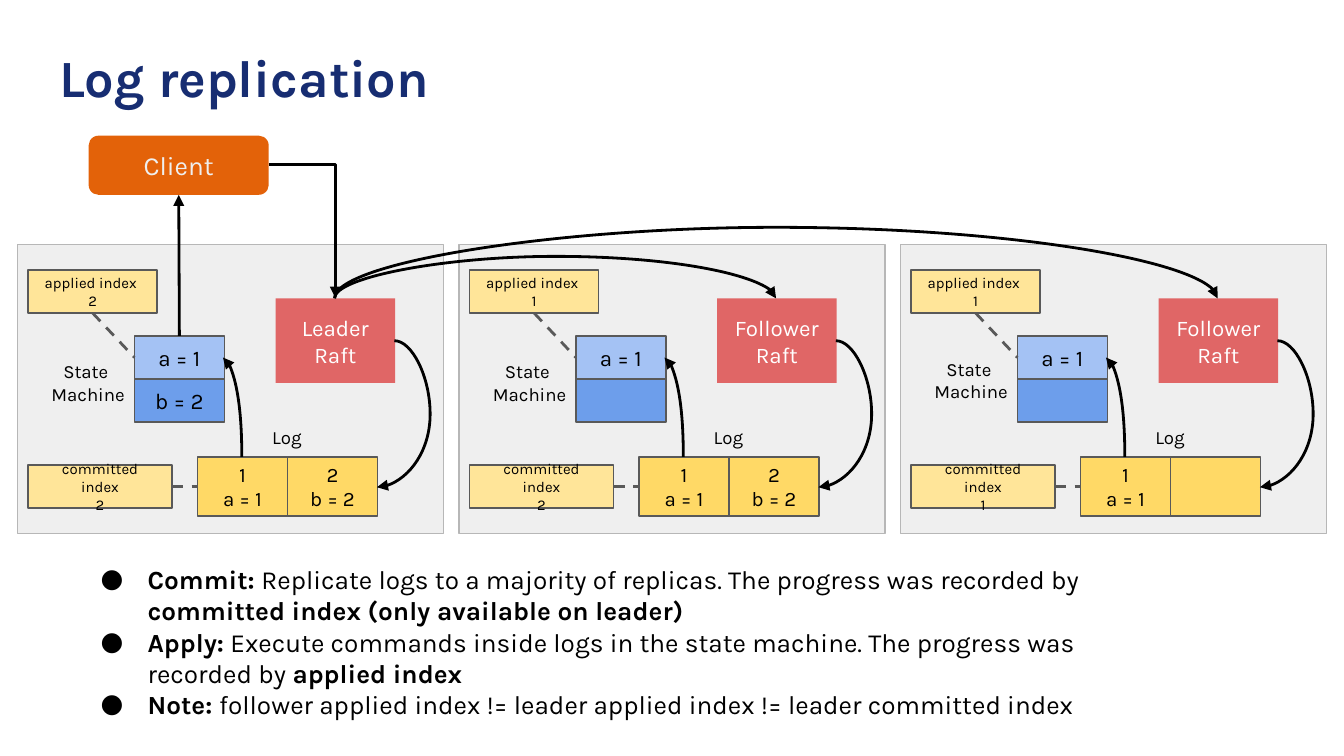
from lxml.etree import SubElement
from pptx import Presentation
from pptx.dml.color import RGBColor
from pptx.enum.dml import MSO_LINE
from pptx.enum.shapes import MSO_CONNECTOR as Link, MSO_SHAPE as Form
from pptx.enum.text import MSO_ANCHOR as Anchor, MSO_AUTO_SIZE as Fit, PP_ALIGN as Align
from pptx.oxml.ns import qn
from pptx.util import Emu, Inches, Pt

# Content
TITLE = "Log replication"
PANELS = [
    {"role": "Leader", "applied": 2, "committed": 2, "label": 2.58,
     "state": ["a = 1", "b = 2"], "log": ["1\na = 1", "2\nb = 2"]},
    {"role": "Follower", "applied": 1, "committed": 2, "label": 2.58,
     "state": ["a = 1", ""], "log": ["1\na = 1", "2\nb = 2"]},
    {"role": "Follower", "applied": 1, "committed": 1, "label": 2.56,
     "state": ["a = 1", ""], "log": ["1\na = 1", ""]},
]
# Each bullet is a list of (text, bold)
BULLETS = [
    [("Commit: ", True),
     ("Replicate logs to a majority of replicas. The progress was recorded by ", False),
     ("committed index (only available on leader)", True)],
    [("Apply:", True),
     (" Execute commands inside logs in the state machine. "
      "The progress was recorded by ", False),
     ("applied index", True)],
    [("Note: ", True),
     ("follower applied index != leader applied index != leader committed index", False)],
]
FONT = "Karla"
BLACK, GREY, WHITE = "000000", "595959", "FFFFFF"
PALE, GOLD, RED = "FFE599", "FFD966", "E06666"
BLUES = ["A4C2F4", "6D9EEB"]
LEFT, STEP = 0.13, 6.57 / 2

# A 16:9 slide
deck = Presentation()
deck.slide_width, deck.slide_height = Inches(10), Inches(10 * 9 / 16)
slide = deck.slides.add_slide(deck.slide_layouts[5])
shapes = slide.shapes


def color(code):
    return RGBColor.from_string(code)


def style(font, size, code, bold=False):
    font.name, font.size, font.bold = FONT, Pt(size), bold
    font.color.rgb = color(code)


def pad(frame, anchor):
    frame.word_wrap, frame.auto_size = True, Fit.NONE
    frame.vertical_anchor = anchor
    frame.margin_left = frame.margin_right = Inches(0.1)
    frame.margin_top = frame.margin_bottom = Inches(0.1)


def write(shape, text, size, code, anchor=Anchor.MIDDLE, align=Align.CENTER, bold=False):
    frame = shape.text_frame
    pad(frame, anchor)
    frame.text = text
    for para in frame.paragraphs:
        para.alignment = align
        for run in para.runs:
            style(run.font, size, code, bold)


def box(x, y, w, h, fill, edge=None, text="", size=12, code=BLACK, form=Form.RECTANGLE):
    shape = shapes.add_shape(form, Inches(x), Inches(y), Inches(w), Inches(h))
    shape.shadow.inherit = False
    shape.fill.solid()
    shape.fill.fore_color.rgb = color(fill)
    if edge:
        shape.line.color.rgb = color(edge)
        shape.line.width = Pt(0.75)
    else:
        shape.line.fill.background()
    if text:
        write(shape, text, size, code)
    return shape


def label(x, y, w, h, text):
    area = shapes.add_textbox(Inches(x), Inches(y), Inches(w), Inches(h))
    write(area, text, 10, BLACK, Anchor.TOP)


def ink(line, code, arrow):
    line.line.color.rgb = color(code)
    line.line.width = Pt(1.5)
    if arrow:
        SubElement(line.line._get_or_add_ln(), qn("a:tailEnd"), type="triangle")
    SubElement(line.element.spPr, qn("a:effectLst"))


def join(start, side, end, stop, code=BLACK, arrow=True):
    line = shapes.add_connector(Link.STRAIGHT, 0, 0, 0, 0)
    line.begin_connect(start, side)
    line.end_connect(end, stop)
    if not arrow:
        line.line.dash_style = MSO_LINE.DASH
    ink(line, code, arrow)


def bend(kind, mid, w, h, turn=0, flip=True, adj=None):
    """Bent or curved arrow, centred on mid; w and h are taken before the turn."""
    line = shapes.add_connector(Link.CURVE, 0, 0, w, h)
    line.left, line.top = int(Inches(mid[0]) - w / 2), int(Inches(mid[1]) - h / 2)
    frame = line.element.spPr.find(qn("a:xfrm"))
    frame.set("rot", str(turn * 60000))
    frame.set("flipH", str(int(flip)))
    shape = line.element.spPr.find(qn("a:prstGeom"))
    shape.set("prst", kind)
    if adj is not None:
        SubElement(shape.find(qn("a:avLst")), qn("a:gd"), name="adj1",
                   fmla=f"val {round(adj * 100000)}")
    ink(line, BLACK, True)


# Title
head = shapes.title
head.left, head.top, head.width, head.height = map(Inches, (0.34, 0.24, 9.32, 0.63))
write(head, TITLE, 28, "172D72", Anchor.TOP, Align.LEFT, True)

# Replica panels
states = []
for n, panel in enumerate(PANELS):
    x = LEFT + STEP * n
    box(x, 1.82, 3.17, 2.15, "EFEFEF", "B7B7B7")
    logs = [box(x + 1.34 + 0.67 * i, 3.4, 0.67, 0.44, GOLD, GREY, text, 11)
            for i, text in enumerate(panel["log"])]
    cells = [box(x + 0.87, 2.5 + 0.32 * i, 0.67, 0.32, BLUES[i], GREY, text)
             for i, text in enumerate(panel["state"])]
    states.append(cells[0])
    label(x + 1.74, 3.07, 0.53, 0.33, "Log")
    label(x - 0.06, panel["label"], 1.17, 0.51, "State \nMachine")
    box(x + 1.92, 2.22, 0.89, 0.63, RED, text=panel["role"] + "\nRaft", code=WHITE)

    # Raft to log, then log to state machine
    bend("curvedConnector3", (x + 2.74, 3.08), Inches(0.13), Inches(1.09), adj=-2.05)
    bend("curvedConnector2", (x + 1.6, 3.03), Inches(0.74), Inches(0.14), turn=90)

    done = box(x + 0.08, 2.01, 0.96, 0.32, PALE, GREY, f"applied index \n{panel['applied']}", 8)
    join(done, 2, cells[0], 1, GREY, False)
    kept = box(x + 0.08, 3.46, 1.07, 0.32, PALE, GREY,
               f"committed index\n{panel['committed']}", 8)
    join(kept, 3, logs[0], 1, GREY, False)

# Client
client = box(0.66, 1.01, 1.34, 0.44, "E36209", text="Client", size=14, code="EFEFEF",
             form=Form.ROUNDED_RECTANGLE)
bend("bentConnector2", (2.25, 1.72), Inches(0.49), Inches(0.99), flip=False)
join(states[0], 0, client, 2)

# Leader to followers: nearly flat frames whose arcs rise above the Raft boxes
FLAT = Emu(600)
for n, rise in enumerate((0.26, 0.44), 1):
    span = STEP * n
    bend("curvedConnector3", (LEFT + 2.36 + span / 2, 2.22), FLAT, Inches(span),
         turn=270, adj=-Inches(rise) / FLAT)

# Bullets
notes = shapes.add_textbox(Inches(0.5), Inches(4.09), Inches(7.74), Inches(1.28)).text_frame
pad(notes, Anchor.TOP)
for i, parts in enumerate(BULLETS):
    para = notes.add_paragraph() if i else notes.paragraphs[0]
    props = para._p.get_or_add_pPr()
    props.set("marL", str(Inches(0.5)))
    props.set("indent", str(Inches(-0.35)))
    SubElement(SubElement(props, qn("a:buClr")), qn("a:srgbClr"), val=BLACK)
    SubElement(props, qn("a:buFont"), typeface=FONT)
    SubElement(props, qn("a:buChar"), char="●")
    for text, bold in parts:
        run = para.add_run()
        run.text = text
        style(run.font, 14, BLACK, bold)

deck.save("out.pptx")
